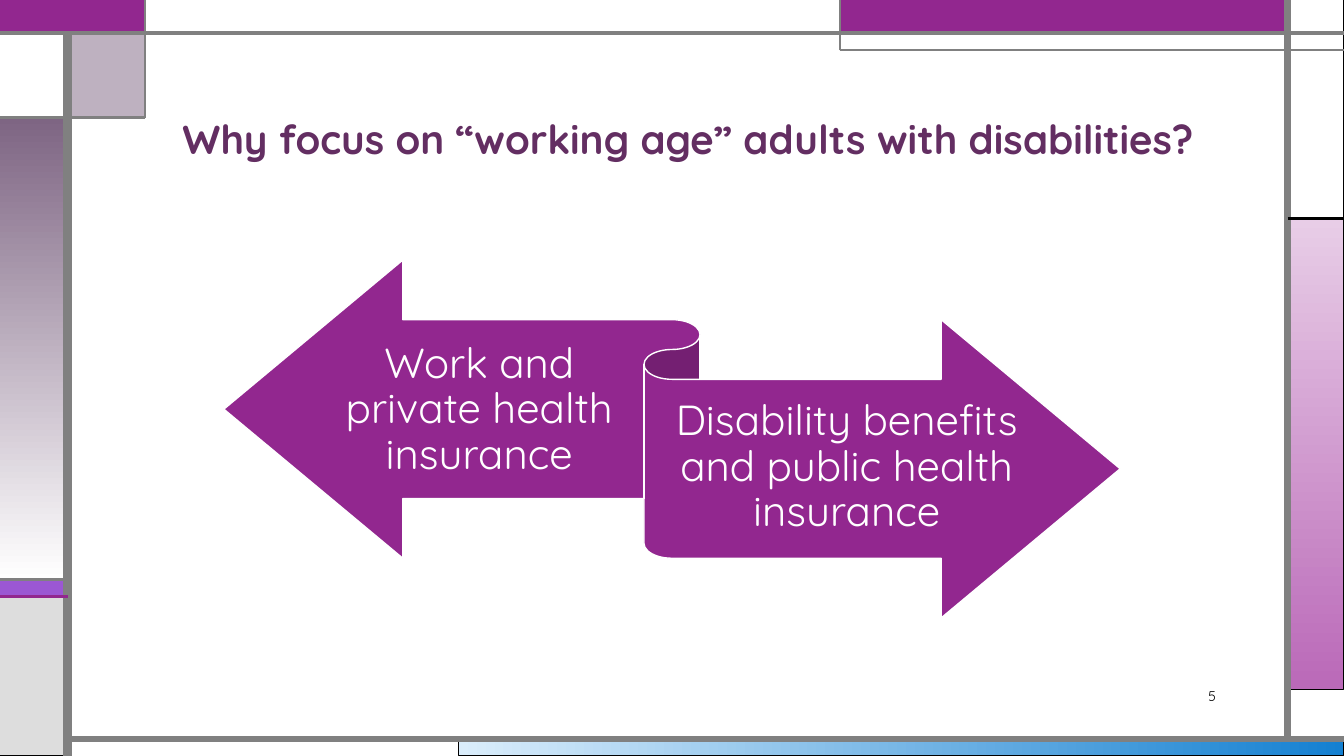
from lxml.etree import SubElement
from pptx import Presentation
from pptx.dml.color import RGBColor
from pptx.enum.shapes import MSO_CONNECTOR, MSO_SHAPE
from pptx.enum.text import MSO_ANCHOR, MSO_AUTO_SIZE, PP_ALIGN
from pptx.oxml.ns import qn
from pptx.util import Inches, Pt

COLORS = {
    "white": "FFFFFF", "black": "000000", "gray": "808080", "silver": "DDDDDD",
    "magenta": "92278F", "violet": "9B57D3", "indigo": "755DD9", "mauve": "7E6583",
    "plum": "632E62", "pink": "E8CDE7", "orchid": "BA69B8", "sky": "DAEDFB", "blue": "1480D1",
}
FONT = "Quicksand"
COLUMNS = (0, 0.67, 1.44, 4.55, 8.33, 12.77, 13.33)
ROWS = (0, 0.33, 0.5, 1.17, 2.17, 5.75, 5.92, 6.84, 7.33, 7.5)

# Each panel: left, top, right and bottom grid lines, fill, line colour, line width
PANELS = (
    (3, 8, 6, 9, ("sky", "blue", 0), "black", 0.75),
    (5, 4, 6, 7, ("pink", "orchid", 270), "black", 0.75),
    (0, 5, 1, 6, "violet", "black", 0.75),
    (0, 6, 1, 9, "silver", "black", 0.75),
    (5, 0, 6, 4, "white", "black", 0.75),
    (4, 0, 5, 1, "magenta", "indigo", 0.75),
    (1, 1, 2, 3, "mauve", "black", 0.75),
    (0, 3, 1, 5, ("mauve", "white", 270), "black", 0.75),
    (0, 1, 1, 3, "white", "black", 0.75),
    (0, 0, 2, 1, "magenta", "magenta", 1.5),
    (2, 0, 4, 1, "white", "gray", 0.75),
)
# Each bar: start column and row, end column and row, colour, width
BARS = (
    (1, 9, 1, 1, "gray", 6),
    (1, 8, 6, 8, "gray", 4.5),
    (5, 8, 5, 0, "gray", 4.5),
    (0, 1, 6, 1, "gray", 3),
    (6, 2, 4, 2, "gray", 1.5),
    (4, 2, 4, 0, "gray", 1.5),
    (5, 4, 6, 4, "black", 2.25),
    (2, 0, 2, 3, "gray", 1.5),
    (2, 3, 0, 3, "gray", 2.25),
    (1, 5, 0, 5, "gray", 2.25),
    (1, 6, 0, 6, "magenta", 2.25),
)


def color(name):
    """Return the named colour."""
    return RGBColor.from_string(COLORS[name])


def add_filled_shape(slide, kind, box, fill, line, width):
    """Add a preset shape with a solid or two-colour gradient fill."""
    shape = slide.shapes.add_shape(kind, *map(Inches, box))
    shape.shadow.inherit = False
    if isinstance(fill, tuple):
        *names, angle = fill
        shape.fill.gradient()
        shape.fill.gradient_angle = angle
        for stop, name in zip(shape.fill.gradient_stops, names):
            stop.color.rgb = color(name)
    else:
        shape.fill.solid()
        shape.fill.fore_color.rgb = color(fill)
    shape.line.color.rgb = color(line)
    shape.line.width = Pt(width)
    return shape


def add_panel(slide, left, top, right, bottom, fill, line, width):
    """Add a rectangle between grid lines."""
    box = (COLUMNS[left], ROWS[top], COLUMNS[right] - COLUMNS[left], ROWS[bottom] - ROWS[top])
    panel = add_filled_shape(slide, MSO_SHAPE.RECTANGLE, box, fill, line, width)
    if fill == "mauve":
        tint = panel._element.spPr.find(qn("a:solidFill"))[0]
        SubElement(tint, qn("a:alpha")).set("val", "50000")


def add_bar(slide, start_column, start_row, end_column, end_row, line, width):
    """Add a straight line between grid points."""
    bar = slide.shapes.add_connector(
        MSO_CONNECTOR.STRAIGHT,
        Inches(COLUMNS[start_column]), Inches(ROWS[start_row]),
        Inches(COLUMNS[end_column]), Inches(ROWS[end_row]),
    )
    bar.line.color.rgb = color(line)
    bar.line.width = Pt(width)
    SubElement(bar._element.spPr, qn("a:effectLst"))


def write_text(shape, text, *, size, ink, align, anchor=MSO_ANCHOR.MIDDLE,
               bold=False, spacing=0.9, margins=(0.1, 0.05)):
    """Write one formatted paragraph into a shape."""
    frame = shape.text_frame
    frame.text = text
    frame.word_wrap = True
    frame.auto_size = MSO_AUTO_SIZE.NONE
    frame.vertical_anchor = anchor
    frame.margin_left = frame.margin_right = Inches(margins[0])
    frame.margin_top = frame.margin_bottom = Inches(margins[1])
    paragraph = frame.paragraphs[0]
    paragraph.alignment = align
    paragraph.line_spacing = spacing
    font = paragraph.runs[0].font
    font.name, font.size, font.bold = FONT, Pt(size), bold
    font.color.rgb = color(ink)


def add_text(slide, box, text, **text_format):
    """Add a text box with formatted text."""
    write_text(slide.shapes.add_textbox(*map(Inches, box)), text, **text_format)


def add_title(slide, box, text):
    """Place and format the slide title."""
    title = slide.shapes.title
    title.left, title.top, title.width, title.height = map(Inches, box)
    write_text(title, text, size=28.8, ink="plum", bold=True,
               align=PP_ALIGN.LEFT, anchor=MSO_ANCHOR.BOTTOM)


def add_ribbon(slide, left, top, width, height, left_text, right_text):
    """Add a two-way ribbon with a label on each arm."""
    add_filled_shape(slide, MSO_SHAPE.LEFT_RIGHT_RIBBON, (left, top, width, height),
                     "magenta", "white", 1)
    labels = ((0.12, 0.175, 0.33, left_text), (0.5, 0.335, 0.39, right_text))
    for across, down, share, text in labels:
        box = (left + across * width, top + down * height, share * width, 0.49 * height)
        add_text(slide, box, text, size=30, ink="white", align=PP_ALIGN.CENTER,
                 margins=(0, 0.12))


def main():
    """Build and save the slide."""
    presentation = Presentation()
    presentation.slide_width = Inches(COLUMNS[-1])
    presentation.slide_height = Inches(ROWS[-1])
    slide = presentation.slides.add_slide(presentation.slide_layouts.get_by_name("Title Only"))
    for panel in PANELS:
        add_panel(slide, *panel)
    for bar in BARS:
        add_bar(slide, *bar)
    add_title(slide, (1.71, 0.67, 10.32, 1), "Why focus on “working age” adults with disabilities?")
    add_ribbon(slide, 2.22, 2.58, 8.89, 3.55, "Work and private health insurance",
               "Disability benefits and public health insurance")
    add_text(slide, (11.08, 6.75, 1.08, 0.3), "5", size=10, ink="black",
             align=PP_ALIGN.RIGHT, spacing=1)
    presentation.save("out.pptx")


if __name__ == "__main__":
    main()
